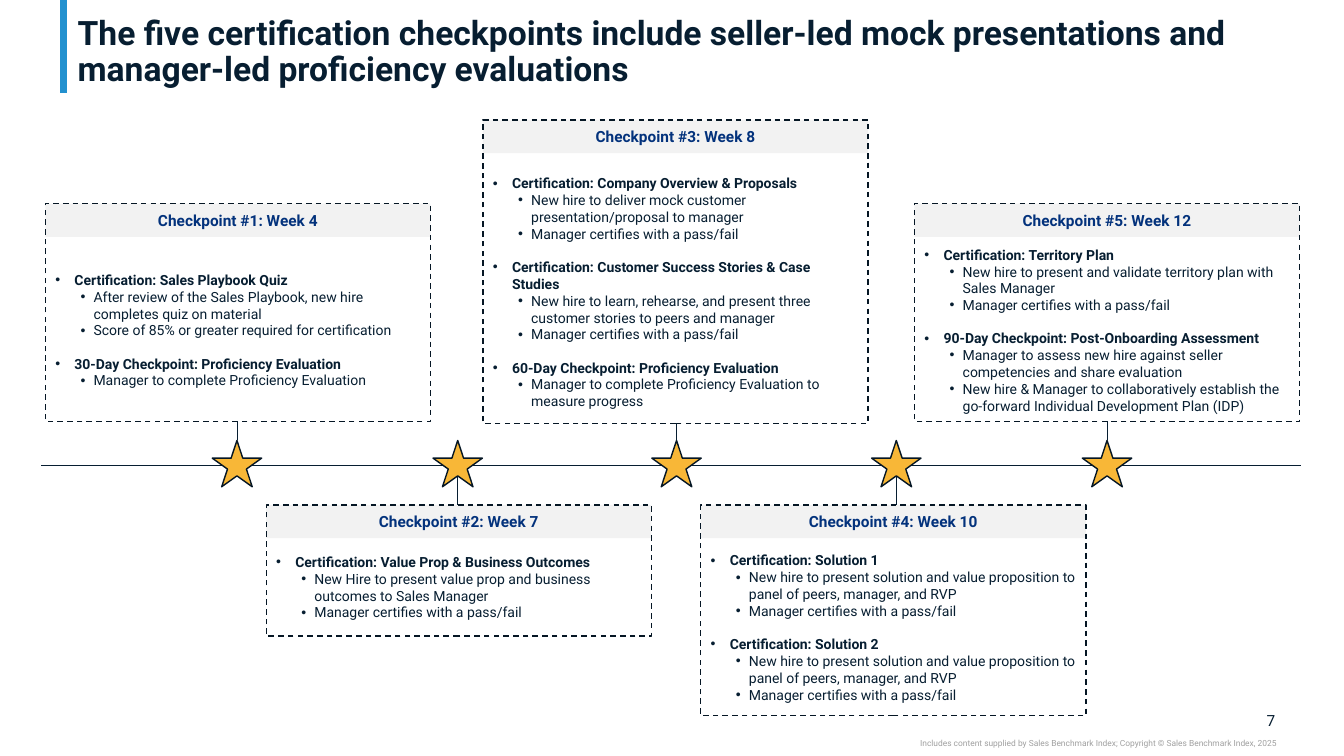
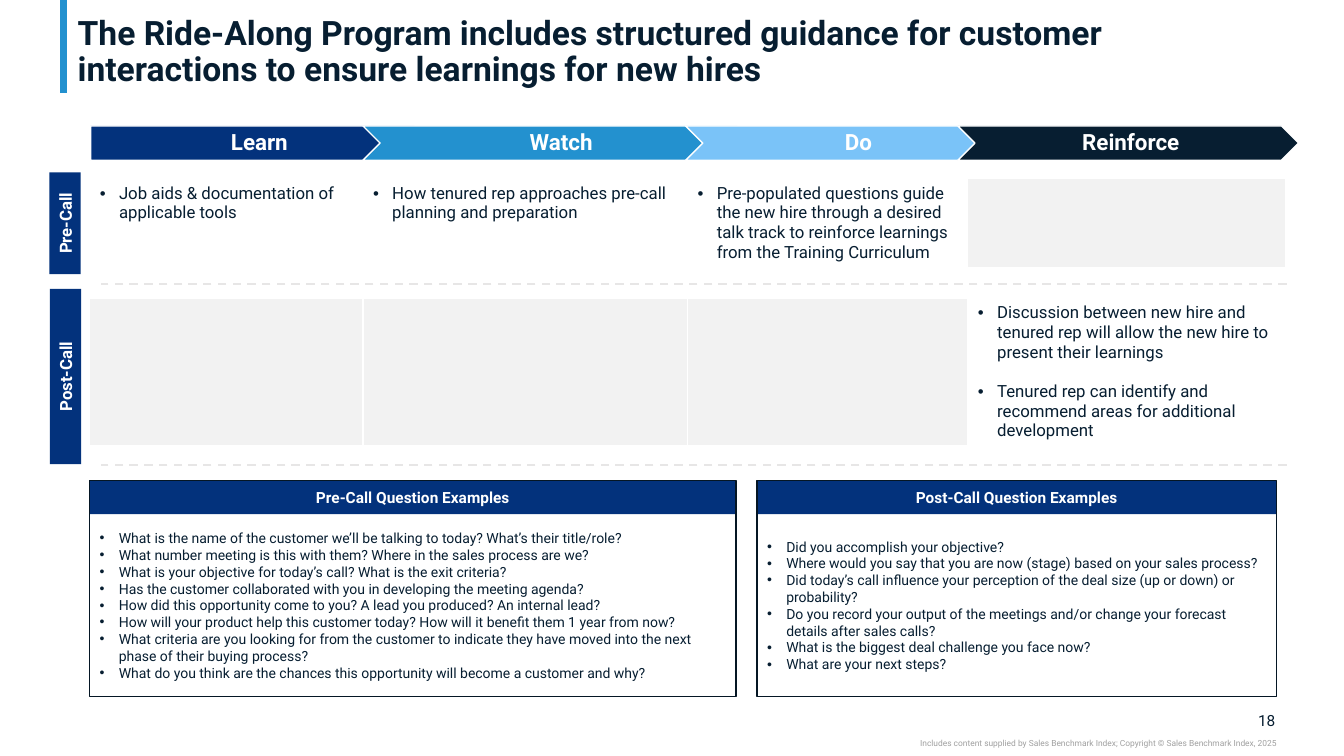
from lxml import etree
from pptx import Presentation
from pptx import util as u
from pptx.dml.color import RGBColor
from pptx.enum import dml, shapes, text
from pptx.oxml.ns import qn

NAVY = RGBColor(0x03, 0x32, 0x7C)
INK = RGBColor(0x07, 0x1E, 0x31)
EDGE = RGBColor(0x05, 0x16, 0x24)
BLUE = RGBColor(0x23, 0x91, 0xCF)
SKY = RGBColor(0x7A, 0xC3, 0xF8)
GOLD = RGBColor(0xF8, 0xB7, 0x37)
PALE = RGBColor(0xF2, 0xF2, 0xF2)
RULE = RGBColor(0xE7, 0xE6, 0xE6)
GRAY = RGBColor(0xA0, 0xA0, 0xA0)
WHITE = RGBColor(0xFF, 0xFF, 0xFF)

FONT = "Roboto"
HEAD_H = 0.33
FOOTER = ("Includes content supplied by Sales Benchmark Index; "
          "Copyright © Sales Benchmark Index, 2025")
KIND = shapes.MSO_SHAPE
LEFT, CENTER, RIGHT = text.PP_ALIGN.LEFT, text.PP_ALIGN.CENTER, text.PP_ALIGN.RIGHT
TOP, MIDDLE = text.MSO_ANCHOR.TOP, text.MSO_ANCHOR.MIDDLE
# Left margin and hanging indent of each bullet level
INDENTS = [(0.19, -0.19), (0.38, -0.13)]


def draw(s, kind, at, fill=None, line=None, width=1, dash=False):
    """Add a preset shape, or a line from (x1, y1) to (x2, y2) when kind is None."""
    at = [u.Inches(v) for v in at]
    if kind is None:
        sp = s.shapes.add_connector(shapes.MSO_CONNECTOR.STRAIGHT, *at)
        etree.SubElement(sp._element.spPr, qn("a:effectLst"))
    else:
        sp = s.shapes.add_shape(kind, *at)
        sp.shadow.inherit = False
        if fill is None:
            sp.fill.background()
        else:
            sp.fill.solid()
            sp.fill.fore_color.rgb = fill
    if line is None:
        sp.line.fill.background()
    else:
        sp.line.color.rgb = line
        sp.line.width = u.Pt(width)
        if dash:
            sp.line.dash_style = dml.MSO_LINE.DASH
    return sp


def write(tf, items, size, color=INK, bold=False, align=LEFT, anchor=MIDDLE,
          gap=0, spacing=None, margins=None):
    """Write (level, text) items; level None is plain, sub-bullets are never bold."""
    tf.word_wrap = True
    tf.vertical_anchor = anchor
    if margins:
        for side, m in zip(("left", "top", "right", "bottom"), margins):
            setattr(tf, "margin_" + side, u.Inches(m))
    for i, (level, words) in enumerate(items):
        p = tf.paragraphs[0] if i == 0 else tf.add_paragraph()
        if level is not None:
            p.level = level
            pPr = p._p.get_or_add_pPr()
            for name, value in zip(("marL", "indent"), INDENTS[level]):
                pPr.set(name, str(u.Inches(value)))
            etree.SubElement(pPr, qn("a:buFont")).set("typeface", "Arial")
            etree.SubElement(pPr, qn("a:buChar")).set("char", "•")
        p.alignment = align
        if spacing:
            p.line_spacing = spacing
        if gap and i and level == 0:
            p.space_before = u.Pt(gap)
        r = p.add_run()
        r.text = words
        fmt = {"name": FONT, "size": u.Pt(size), "bold": bold and level != 1}
        for key, value in fmt.items():
            setattr(r.font, key, value)
        r.font.color.rgb = color


prs = Presentation()
prs.slide_width, prs.slide_height = u.Inches(13.33), u.Inches(7.5)

# Shared frame: accent bar, title, page number, footer
slides = []
for title, number in [
    ("The five certification checkpoints include seller-led mock presentations "
     "and manager-led proficiency evaluations", "7"),
    ("The Ride-Along Program includes structured guidance for customer "
     "interactions to ensure learnings for new hires", "18"),
]:
    s = prs.slides.add_slide(prs.slide_layouts[5])
    draw(s, None, (0.63, 0, 0.63, 0.92), line=BLUE, width=5)
    sp = s.shapes.title
    sp.left, sp.top, sp.width, sp.height = [u.Inches(v) for v in (0.67, 0.04, 11.99, 0.84)]
    sp.text_frame.auto_size = text.MSO_AUTO_SIZE.NONE
    write(sp.text_frame, [(None, title)], 24, bold=True, spacing=0.9,
          anchor=text.MSO_ANCHOR.BOTTOM, margins=(0.1, 0, 0.1, 0))
    for at, words, size, color, anchor in [
        ((12.32, 7.05, 0.33, 0.19), number, 11, INK, MIDDLE),
        ((7.5, 7.32, 5.16, 0.1), FOOTER, 6, GRAY, TOP),
    ]:
        sp = draw(s, KIND.RECTANGLE, at)
        write(sp.text_frame, [(None, words)], size, color, align=RIGHT,
              anchor=anchor, margins=(0, 0, 0, 0))
    slides.append(s)
timeline, ride_along = slides

# Slide 1: timeline axis
AXIS_Y, STAR_TOP, STAR_W, STAR_H = 4.62, 4.37, 0.49, 0.46
CARD_W = 3.82
draw(timeline, None, (0.41, AXIS_Y, 12.9, AXIS_Y), line=INK, width=0.75)

# Checkpoints: week, left, top, height, extra text depth, star centre, items
PASS = (1, "Manager certifies with a pass/fail")
PANEL = (1, "New hire to present solution and value proposition to panel of "
            "peers, manager, and RVP")
checkpoints = [
    (4, 0.45, 2.02, 2.16, 0.02, 2.35, [
        (0, "Certification: Sales Playbook Quiz"),
        (1, "After review of the Sales Playbook, new hire completes quiz on material"),
        (1, "Score of 85% or greater required for certification"),
        (0, "30-Day Checkpoint: Proficiency Evaluation"),
        (1, "Manager to complete Proficiency Evaluation")]),
    (7, 2.64, 5.01, 1.3, 0, 4.54, [
        (0, "Certification: Value Prop & Business Outcomes"),
        (1, "New Hire to present value prop and business outcomes to Sales Manager"),
        PASS]),
    (8, 4.79, 1.19, 3.01, 0.08, 6.71, [
        (0, "Certification: Company Overview & Proposals"),
        (1, "New hire to deliver mock customer presentation/proposal to manager"),
        PASS,
        (0, "Certification: Customer Success Stories & Case Studies"),
        (1, "New hire to learn, rehearse, and present three customer stories to "
            "peers and manager"),
        PASS,
        (0, "60-Day Checkpoint: Proficiency Evaluation"),
        (1, "Manager to complete Proficiency Evaluation to measure progress")]),
    (10, 6.95, 5.01, 2.09, 0.01, 8.89, [
        (0, "Certification: Solution 1"), PANEL, PASS,
        (0, "Certification: Solution 2"), PANEL, PASS]),
    (12, 9.07, 2.02, 2.16, 0.02, 10.98, [
        (0, "Certification: Territory Plan"),
        (1, "New hire to present and validate territory plan with Sales Manager"),
        PASS,
        (0, "90-Day Checkpoint: Post-Onboarding Assessment"),
        (1, "Manager to assess new hire against seller competencies and share evaluation"),
        (1, "New hire & Manager to collaboratively establish the go-forward "
            "Individual Development Plan (IDP)")]),
]
for n, (week, x, y, h, extra, star_x, items) in enumerate(checkpoints, 1):
    sp = draw(timeline, KIND.RECTANGLE, (x, y + HEAD_H, CARD_W, h - HEAD_H + extra))
    write(sp.text_frame, items, 10, bold=True, gap=11.7)
    sp = draw(timeline, KIND.RECTANGLE, (x, y, CARD_W, HEAD_H), PALE)
    write(sp.text_frame, [(None, f"Checkpoint #{n}: Week {week}")], 11, NAVY,
          bold=True, align=CENTER)
    draw(timeline, KIND.RECTANGLE, (x, y, CARD_W, h), line=EDGE, dash=True)
    stem = (y + h, STAR_TOP) if y < AXIS_Y else (4.7, y)
    draw(timeline, None, (star_x, stem[0], star_x, stem[1]), line=INK, width=0.5)
    draw(timeline, KIND.STAR_5_POINT, (star_x - STAR_W / 2, STAR_TOP, STAR_W, STAR_H),
         GOLD, EDGE)

# Slide 2: stage arrows
for kind, x, w, color, words in [
    (KIND.PENTAGON, 0.9, 3.38, NAVY, "Learn"),
    (KIND.CHEVRON, 3.6, 3.88, BLUE, "Watch"),
    (KIND.CHEVRON, 6.8, 3.38, SKY, "Do"),
    (KIND.CHEVRON, 9.5, 3.38, INK, "Reinforce"),
]:
    sp = draw(ride_along, kind, (x, 1.25, w, 0.34), color, WHITE)
    write(sp.text_frame, [(None, words)], 16, WHITE, bold=True, align=CENTER,
          spacing=0.9, margins=(0.07, 0.05, 0.02, 0.05))

# Guidance table: cells without text are grey, the middle row is a gap
guidance = [
    [["Job aids & documentation of applicable tools"],
     ["How tenured rep approaches pre-call planning and preparation"],
     ["Pre-populated questions guide the new hire through a desired talk track "
      "to reinforce learnings from the Training Curriculum"],
     []],
    [[], [], [], []],
    [[], [], [],
     ["Discussion between new hire and tenured rep will allow the new hire to "
      "present their learnings",
      "Tenured rep can identify and recommend areas for additional development"]],
]
col_widths, row_heights = [2.71, 3.22, 2.78, 3.15], [0.88, 0.3, 1.45]
tbl = ride_along.shapes.add_table(
    3, 4, u.Inches(0.89), u.Inches(1.77),
    u.Inches(sum(col_widths)), u.Inches(sum(row_heights))).table
tbl.first_row = tbl.horz_banding = False
for col, w in zip(tbl.columns, col_widths):
    col.width = u.Inches(w)
for i, (row, h) in enumerate(zip(tbl.rows, row_heights)):
    row.height = u.Inches(h)
    for cell, lines in zip(row.cells, guidance[i]):
        if lines:
            write(cell.text_frame, [(0, t) for t in lines], 12, anchor=TOP, gap=14)
        else:
            cell.margin_top = cell.margin_bottom = 0
        if lines or i == 1:
            cell.fill.background()
        else:
            cell.fill.solid()
            cell.fill.fore_color.rgb = PALE

# Row dividers and rotated row labels
for y in (2.82, 4.61):
    draw(ride_along, None, (12.76, y, 1, y), line=RULE, width=1.5, dash=True)
for words, x, y, w in [("Pre-Call", 0.14, 2.06, 1.01), ("Post-Call", -0.22, 3.58, 1.74)]:
    sp = draw(ride_along, KIND.RECTANGLE, (x, y, w, 0.31), NAVY)
    sp.rotation = 270
    write(sp.text_frame, [(None, words)], 12, WHITE, bold=True, align=CENTER)

# Question panels
PANEL_Y, PANEL_H = 4.77, 2.14
for head, x, w, questions in [
    ("Pre-Call Question Examples", 0.89, 6.41, [
        "What is the name of the customer we’ll be talking to today? What’s their title/role?",
        "What number meeting is this with them? Where in the sales process are we?",
        "What is your objective for today’s call? What is the exit criteria?",
        "Has the customer collaborated with you in developing the meeting agenda?",
        "How did this opportunity come to you? A lead you produced? An internal lead?",
        "How will your product help this customer today? How will it benefit them 1 year from now?",
        "What criteria are you looking for from the customer to indicate they have "
        "moved into the next phase of their buying process?",
        "What do you think are the chances this opportunity will become a customer and why?"]),
    ("Post-Call Question Examples", 7.51, 5.15, [
        "Did you accomplish your objective?",
        "Where would you say that you are now (stage) based on your sales process?",
        "Did today’s call influence your perception of the deal size (up or down) or probability?",
        "Do you record your output of the meetings and/or change your forecast "
        "details after sales calls?",
        "What is the biggest deal challenge you face now?",
        "What are your next steps?"]),
]:
    sp = draw(ride_along, KIND.RECTANGLE, (x, PANEL_Y + HEAD_H, w, PANEL_H - HEAD_H))
    write(sp.text_frame, [(0, q) for q in questions], 10)
    sp = draw(ride_along, KIND.RECTANGLE, (x, PANEL_Y, w, HEAD_H), NAVY)
    write(sp.text_frame, [(None, head)], 11, WHITE, bold=True, align=CENTER)
    draw(ride_along, KIND.RECTANGLE, (x, PANEL_Y, w, PANEL_H), line=EDGE)

prs.save("out.pptx")
